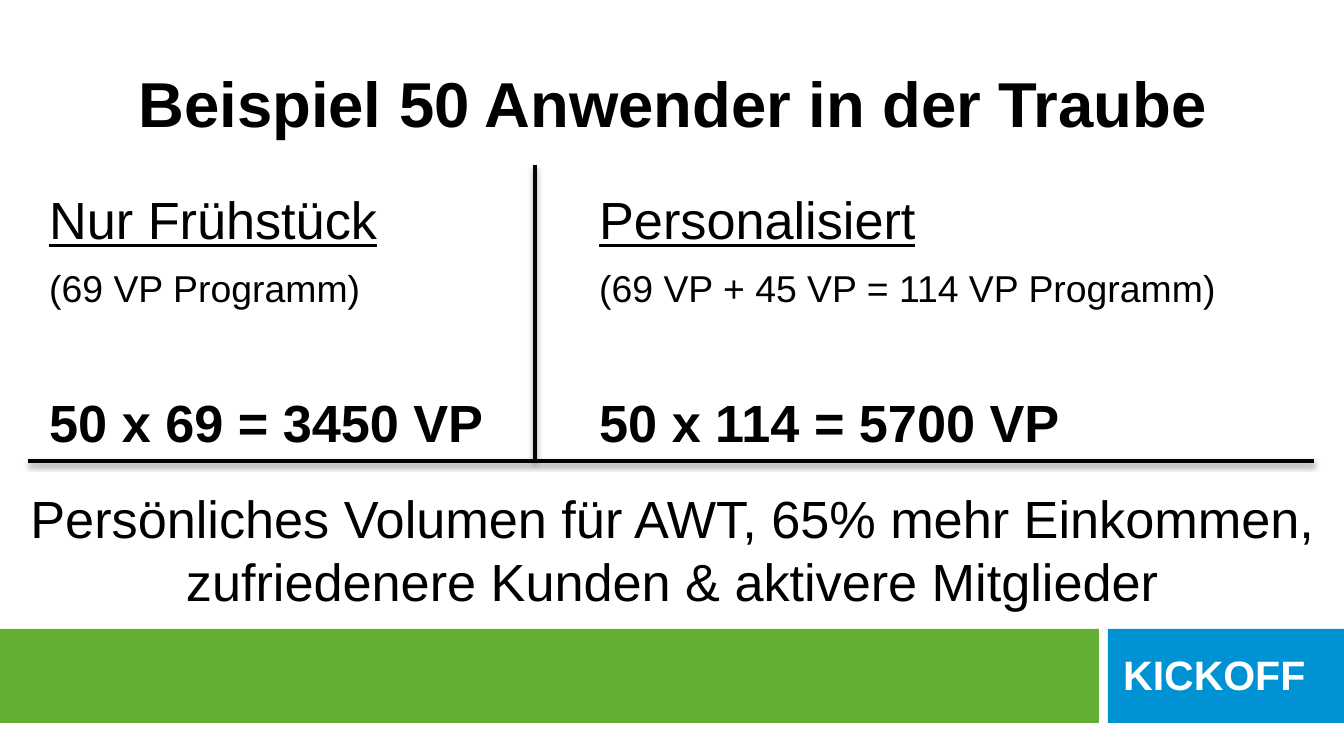
from dataclasses import dataclass

from lxml import etree
from pptx import Presentation
from pptx.dml.color import RGBColor
from pptx.enum.shapes import MSO_CONNECTOR, MSO_SHAPE
from pptx.enum.text import MSO_ANCHOR, PP_ALIGN
from pptx.oxml import parse_xml
from pptx.oxml.ns import nsdecls
from pptx.slide import Slide
from pptx.util import Emu, Pt

PX = 914400 / 134.4
BLACK = RGBColor(0x00, 0x00, 0x00)
WHITE = RGBColor(0xFF, 0xFF, 0xFF)
GREEN = RGBColor(0x63, 0xAF, 0x34)
BLUE = RGBColor(0x00, 0x92, 0xD2)

SHADOW = f"""<a:effectLst {nsdecls('a')}>
  <a:outerShdw blurRad="40000" dist="20000" dir="5400000" rotWithShape="0">
    <a:srgbClr val="000000"><a:alpha val="38000"/></a:srgbClr>
  </a:outerShdw>
</a:effectLst>"""


@dataclass(frozen=True)
class Box:
    left: int
    top: int
    width: int
    height: int

    def emu(self) -> list[Emu]:
        return [px(v) for v in (self.left, self.top, self.width, self.height)]


@dataclass(frozen=True)
class Line:
    text: str
    size: int
    bold: bool = False
    underline: bool = False
    color: RGBColor = BLACK
    before: int = 0
    spacing: float = 1.0


@dataclass(frozen=True)
class TextBlock:
    box: Box
    lines: tuple[Line, ...]
    align: PP_ALIGN = PP_ALIGN.LEFT
    anchor: MSO_ANCHOR = MSO_ANCHOR.TOP


@dataclass(frozen=True)
class Bar:
    box: Box
    color: RGBColor


@dataclass(frozen=True)
class Rule:
    x1: int
    y1: int
    x2: int
    y2: int


def px(value: int) -> Emu:
    return Emu(round(value * PX))


def draw_bar(s: Slide, bar: Bar) -> None:
    sp = s.shapes.add_shape(MSO_SHAPE.RECTANGLE, *bar.box.emu())
    sp.shadow.inherit = False
    sp.fill.solid()
    sp.fill.fore_color.rgb = bar.color
    sp.line.fill.background()


def draw_text(s: Slide, block: TextBlock) -> None:
    tf = s.shapes.add_textbox(*block.box.emu()).text_frame
    tf.word_wrap = True
    tf.vertical_anchor = block.anchor
    for i, line in enumerate(block.lines):
        p = tf.add_paragraph() if i else tf.paragraphs[0]
        p.alignment = block.align
        p.line_spacing = line.spacing
        if line.before:
            p.space_before = Pt(line.before)
        r = p.add_run()
        r.text = line.text
        formats = {"name": "Arial", "size": Pt(line.size),
                   "bold": line.bold, "underline": line.underline}
        for name, value in formats.items():
            setattr(r.font, name, value)
        r.font.color.rgb = line.color


def draw_rule(s: Slide, rule: Rule) -> None:
    ends = [px(v) for v in (rule.x1, rule.y1, rule.x2, rule.y2)]
    cxn = s.shapes.add_connector(MSO_CONNECTOR.STRAIGHT, *ends)
    cxn.line.color.rgb = BLACK
    cxn.line.width = Pt(2)
    cxn._element.spPr.append(parse_xml(SHADOW))


def column(left: int, width: int, heading: str, note: str, total: str) -> TextBlock:
    return TextBlock(Box(left, 181, width, 272), (
        Line(heading, 28, underline=True),
        Line(note, 20, before=8),
        Line(total, 28, bold=True, before=43),
    ))


BARS = (
    Bar(Box(0, 629, 1099, 94), GREEN),
    Bar(Box(1108, 629, 236, 94), BLUE),
)

TEXTS = (
    TextBlock(Box(1110, 652, 234, 54),
              (Line("KICKOFF", 22, bold=True, color=WHITE, spacing=0.8),)),
    TextBlock(Box(124, 39, 1098, 126),
              (Line("Beispiel 50 Anwender in der Traube", 34, bold=True),),
              PP_ALIGN.CENTER, MSO_ANCHOR.MIDDLE),
    column(36, 475, "Nur Frühstück", "(69 VP Programm)", "50 x 69 = 3450 VP"),
    column(586, 667, "Personalisiert", "(69 VP + 45 VP = 114 VP Programm)",
           "50 x 114 = 5700 VP"),
    TextBlock(Box(0, 480, 1344, 140),
              (Line("Persönliches Volumen für AWT, 65% mehr Einkommen, "
                    "zufriedenere Kunden & aktivere Mitglieder", 28),),
              PP_ALIGN.CENTER),
)

RULES = (
    Rule(535, 165, 535, 461),
    Rule(28, 461, 1314, 461),
)


def main() -> None:
    prs = Presentation()
    prs.slide_width, prs.slide_height = px(1344), px(756)
    s = prs.slides.add_slide(prs.slide_layouts[6])

    # Footer bars
    for bar in BARS:
        draw_bar(s, bar)

    # Title, columns, conclusion and footer label
    for block in TEXTS:
        draw_text(s, block)

    # Dividing lines
    for rule in RULES:
        draw_rule(s, rule)

    prs.save("out.pptx")


if __name__ == "__main__":
    main()
